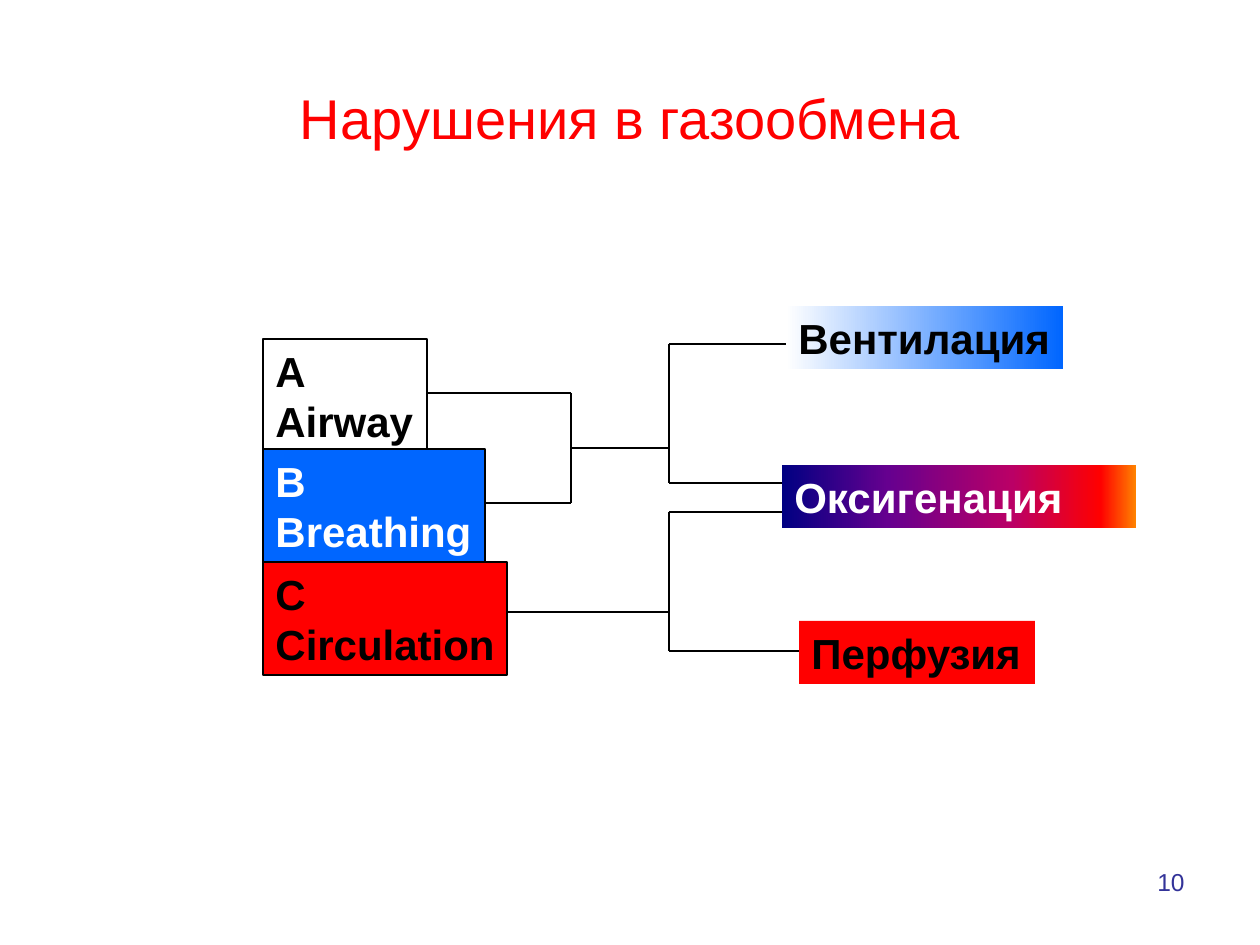
import dataclasses
import pptx
import pptx.util
import pptx.oxml
import pptx.oxml.ns
import pptx.dml.color
import pptx.enum.shapes
import pptx.enum.text

PX = 914400 / 126
ALIGN = pptx.enum.text.PP_ALIGN
ANCHOR = pptx.enum.text.MSO_ANCHOR


@dataclasses.dataclass(frozen=True)
class Theme:
    font: str = "Arial"
    title_size: int = 32
    label_size: int = 24
    number_size: int = 14
    line_width: int = 1
    black: str = "000000"
    white: str = "FFFFFF"
    blue: str = "0066FF"
    red: str = "FF0000"
    number: str = "333399"
    ventilation: tuple = ((0, "FFFFFF"), (100, "0066FF"))
    oxygenation: tuple = ((0, "000082"), (30, "66008F"), (65, "BA0066"),
                          (90, "FF0000"), (100, "FF8200"))


THEME = Theme()


def px(*values):
    return [pptx.util.Emu(round(value * PX)) for value in values]


def rgb(value):
    return pptx.dml.color.RGBColor.from_string(value)


def write(shape, lines, size, color, bold=False, align=ALIGN.LEFT,
          anchor=ANCHOR.TOP, wrap=True):
    frame = shape.text_frame
    frame.word_wrap = wrap
    frame.vertical_anchor = anchor
    for index, line in enumerate(lines):
        para = frame.add_paragraph() if index else frame.paragraphs[0]
        para.alignment = align
        span = para.add_run()
        span.text = line
        span.font.name = THEME.font
        span.font.size = pptx.util.Pt(size)
        span.font.bold = bold
        span.font.color.rgb = rgb(color)


def paint(shape, fill):
    if isinstance(fill, str):
        shape.fill.solid()
        shape.fill.fore_color.rgb = rgb(fill)
        return
    shape.fill.gradient()
    shape.fill.gradient_angle = 0
    stops = shape._element.spPr.find(".//" + pptx.oxml.ns.qn("a:gsLst"))
    for stop in list(stops):
        stops.remove(stop)
    for position, color in fill:
        stops.append(pptx.oxml.parse_xml(
            f'<a:gs {pptx.oxml.ns.nsdecls("a")} pos="{position * 1000}">'
            f'<a:srgbClr val="{color}"/></a:gs>'))


def add_label(page, box, lines, fill, color, outlined=False):
    shape = page.shapes.add_shape(
        pptx.enum.shapes.MSO_SHAPE.RECTANGLE, *px(*box))
    shape.shadow.inherit = False
    paint(shape, fill)
    if outlined:
        shape.line.color.rgb = rgb(THEME.black)
        shape.line.width = pptx.util.Pt(THEME.line_width)
    else:
        shape.line.fill.background()
    write(shape, lines, THEME.label_size, color, bold=True, wrap=False)


def add_line(page, start, end, arrow=False):
    line = page.shapes.add_connector(
        pptx.enum.shapes.MSO_CONNECTOR.STRAIGHT, *px(*start, *end))
    line.line.color.rgb = rgb(THEME.black)
    line.line.width = pptx.util.Pt(THEME.line_width)
    if arrow:
        line.line._get_or_add_ln().append(pptx.oxml.parse_xml(
            f'<a:tailEnd {pptx.oxml.ns.nsdecls("a")} type="triangle"/>'))
    line._element.spPr.append(pptx.oxml.parse_xml(
        f'<a:effectLst {pptx.oxml.ns.nsdecls("a")}/>'))


def add_title(page, box):
    shape = page.shapes.add_textbox(*px(*box))
    write(shape, ["Нарушения в газообмена"], THEME.title_size, THEME.red,
          align=ALIGN.CENTER, anchor=ANCHOR.MIDDLE)


def add_page_number(page, box):
    shape = page.shapes.add_textbox(*px(*box))
    write(shape, ["10"], THEME.number_size, THEME.number, align=ALIGN.RIGHT)


def add_links(page, box):
    left, top, width, height = box
    merge, split = left + 149, left + 247
    airway, breathing, circulation = top + 49, top + 159, top + 268
    middle = (airway + breathing) // 2
    add_line(page, (left, airway), (merge, airway))
    add_line(page, (left + 29, breathing), (merge, breathing))
    add_line(page, (merge, airway), (merge, breathing))
    add_line(page, (merge, middle), (split, middle))
    add_line(page, (left + 29, circulation), (split, circulation))
    forks = [((top, left + width - 19), (top + 139, left + width - 19)),
             ((top + 168, left + width - 29), (top + height, left + width))]
    for fork in forks:
        add_line(page, (split, fork[0][0]), (split, fork[1][0]))
        for level, tip in fork:
            add_line(page, (split, level), (tip, level), arrow=True)


def add_causes(page, box):
    left, top, width, height = box
    causes = [
        (0, 164, ["А", "Airway"], THEME.white, THEME.black),
        (110, 222, ["В", "Breathing"], THEME.blue, THEME.white),
        (223, width, ["С", "Circulation"], THEME.red, THEME.black),
    ]
    for offset, across, lines, fill, color in causes:
        add_label(page, (left, top + offset, across, height - 223),
                  lines, fill, color, outlined=True)


def add_effects(page, box):
    left, top, width, height = box
    effects = [
        (4, 0, 277, "Вентилация", THEME.ventilation, THEME.black),
        (0, 159, width, "Оксигенация", THEME.oxygenation, THEME.white),
        (17, 315, 236, "Перфузия", THEME.red, THEME.black),
    ]
    for shift, offset, across, text, fill, color in effects:
        add_label(page, (left + shift, top + offset, across, height - 315),
                  [text], fill, color)


def main():
    deck = pptx.Presentation()
    deck.slide_width, deck.slide_height = px(1260, 945)
    page = deck.slides.add_slide(deck.slide_layouts[6])
    add_title(page, (63, 38, 1134, 158))
    add_links(page, (422, 344, 406, 307))
    add_causes(page, (263, 339, 244, 336))
    add_effects(page, (782, 306, 354, 378))
    add_page_number(page, (903, 861, 294, 66))
    deck.save("out.pptx")


if __name__ == "__main__":
    main()
